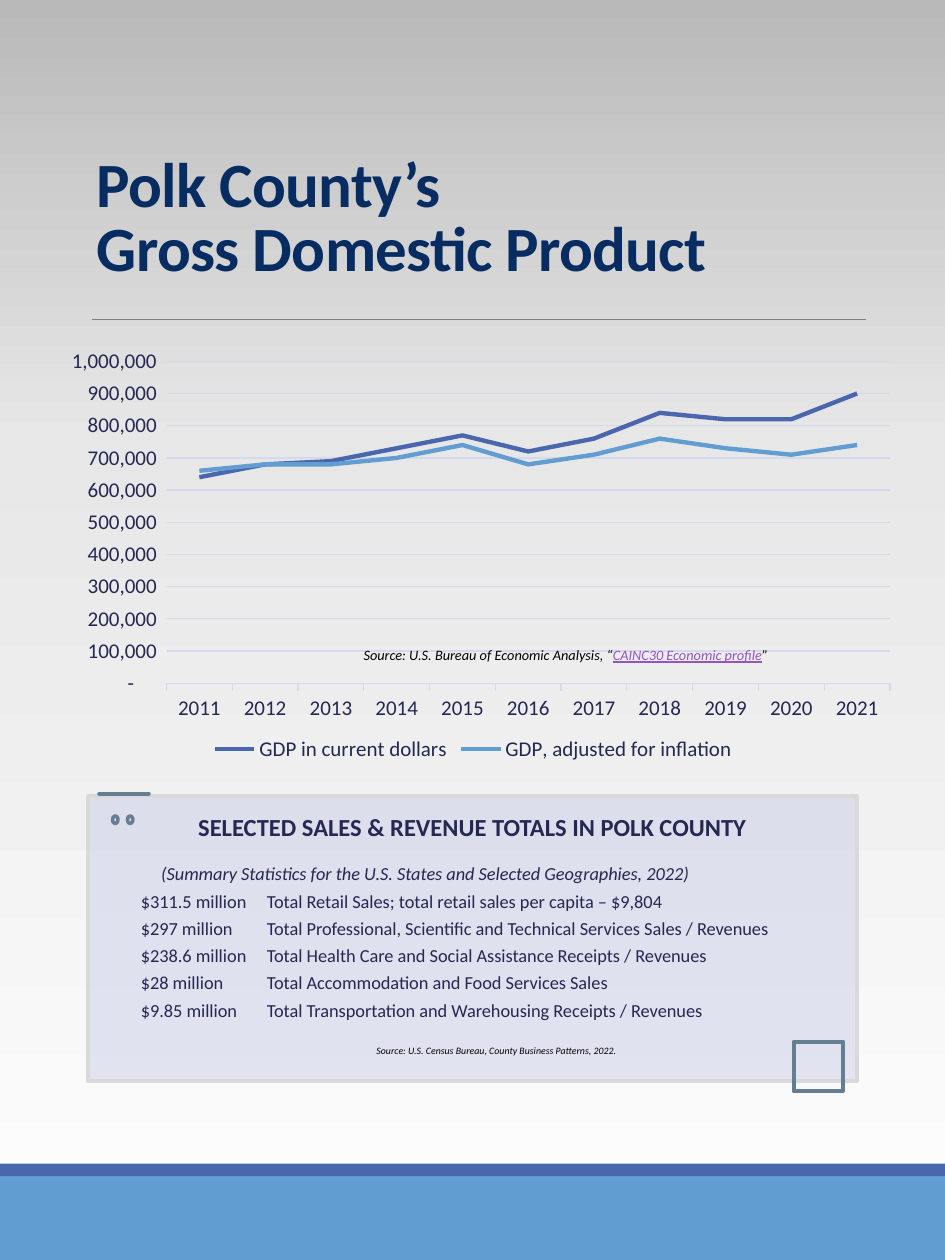
from copy import deepcopy
from dataclasses import dataclass
from math import cos, pi, sin

from lxml.etree import SubElement
from pptx import Presentation
from pptx.chart.data import CategoryChartData
from pptx.dml.color import RGBColor
from pptx.enum.chart import XL_CHART_TYPE, XL_LEGEND_POSITION, XL_TICK_MARK
from pptx.enum.shapes import MSO_CONNECTOR, MSO_SHAPE
from pptx.enum.text import MSO_ANCHOR, PP_ALIGN
from pptx.oxml.ns import qn
from pptx.util import Cm, Pt

FONT = "Calibri"
INK = "242852"
NAVY = "072C62"
BLUE = "4A66AC"
SKY = "629DD1"
GRID = "D6D8ED"
SLATE = "657E93"
BLACK = "000000"


@dataclass
class Bit:
    text: str
    size: float
    tint: str = INK
    bold: bool = False
    slant: bool = False
    under: bool = False


@dataclass
class Line:
    name: str
    tint: str
    vals: list[int]


@dataclass
class Sale:
    total: str
    label: str


@dataclass
class Stroke:
    points: list[tuple[float, float]]
    close: bool = False


LINES = [
    Line("GDP in current dollars", BLUE,
         [640000, 680000, 690000, 730000, 770000, 720000, 760000, 840000, 820000, 820000, 900000]),
    Line("GDP, adjusted for inflation", SKY,
         [660000, 680000, 680000, 700000, 740000, 680000, 710000, 760000, 730000, 710000, 740000]),
]
SALES = [
    Sale("$311.5 million", "Total Retail Sales; total retail sales per capita – $9,804"),
    Sale("$297 million", "Total Professional, Scientific and Technical Services Sales / Revenues"),
    Sale("$238.6 million", "Total Health Care and Social Assistance Receipts / Revenues"),
    Sale("$28 million", "Total Accommodation and Food Services Sales"),
    Sale("$9.85 million", "Total Transportation and Warehousing Receipts / Revenues"),
]
ARC = [(16.35 - 0.19 * cos(pi * i / 12), 21.18 - 0.19 * sin(pi * i / 12)) for i in range(13)]
ICONS = [
    Stroke([(1.92, 15.58), (2.06, 15.58), (2.21, 16.24), (2.74, 16.24), (2.86, 15.74), (2.11, 15.74)]),
    Stroke([(2.2, 16.25), (2.17, 16.33), (2.26, 16.37), (2.74, 16.37)]),
    Stroke([(16.04, 21.35), (16.66, 21.35), (16.73, 22.11), (15.99, 22.11)], True),
    Stroke([(16.16, 21.46), *ARC, (16.54, 21.46)]),
]


def hue(code: str) -> RGBColor:
    return RGBColor.from_string(code)


def style(font, size: float, tint: str) -> None:
    font.name = FONT
    font.size = Pt(size)
    font.color.rgb = hue(tint)


def write(para, *bits: Bit) -> None:
    for bit in bits:
        run = para.add_run()
        run.text = bit.text
        style(run.font, bit.size, bit.tint)
        run.font.bold = bit.bold
        run.font.italic = bit.slant
        run.font.underline = bit.under


def pen(line, tint: str, width: float) -> None:
    line.color.rgb = hue(tint)
    line.width = Pt(width)


def block(slide, kind, x: float, y: float, w: float, h: float, tint: str = ""):
    shape = slide.shapes.add_shape(kind, Cm(x), Cm(y), Cm(w), Cm(h))
    shape.shadow.inherit = False
    shape.line.fill.background()
    if tint:
        shape.fill.solid()
        shape.fill.fore_color.rgb = hue(tint)
    else:
        shape.fill.background()
    return shape


def note(slide, x: float, y: float, w: float, h: float, *bits: Bit) -> None:
    frame = slide.shapes.add_textbox(Cm(x), Cm(y), Cm(w), Cm(h)).text_frame
    frame.word_wrap = True
    frame.vertical_anchor = MSO_ANCHOR.MIDDLE
    write(frame.paragraphs[0], *bits)


def draw(slide, stroke: Stroke) -> None:
    first, *rest = stroke.points
    build = slide.shapes.build_freeform(*first, scale=Cm(1))
    build.add_line_segments(rest, close=stroke.close)
    shape = build.convert_to_shape()
    shape.shadow.inherit = False
    shape.fill.background()
    pen(shape.line, SLATE, 2.25)


def shade(slide) -> None:
    fill = slide.background.fill
    fill.gradient()
    fill.gradient_angle = 90
    stops = slide.element.find(".//" + qn("a:gsLst"))
    stops.insert(1, deepcopy(stops[0]))
    for stop, (spot, tint) in zip(fill.gradient_stops, [(0, "FEFEFE"), (0.65, "E7E7E7"), (1, "B9B9B9")]):
        stop.position = spot
        stop.color.rgb = hue(tint)


def head(slide) -> None:
    title = slide.shapes.title
    title.left, title.top, title.width, title.height = Cm(1.7), Cm(2.74), Cm(15.44), Cm(3.12)
    frame = title.text_frame
    frame.word_wrap = True
    frame.vertical_anchor = MSO_ANCHOR.BOTTOM
    para = frame.paragraphs[0]
    para.alignment = PP_ALIGN.LEFT
    para.line_spacing = 0.85
    write(para, Bit("Polk County’s", 36, NAVY, True))
    para.add_line_break()
    write(para, Bit("Gross Domestic Product", 36, NAVY, True))
    for props in title.element.iter(qn("a:rPr")):
        props.set("spc", "-40")
    rule = slide.shapes.add_connector(MSO_CONNECTOR.STRAIGHT, Cm(1.85), Cm(6.43), Cm(17.45), Cm(6.43))
    pen(rule.line, "808080", 0.5)
    SubElement(rule.element.spPr, qn("a:effectLst"))


def place(chart) -> None:
    area = chart.element.find(".//" + qn("c:plotArea"))
    for old in area.findall(qn("c:layout")):
        area.remove(old)
    lay = SubElement(area, qn("c:layout"))
    area.insert(0, lay)
    man = SubElement(lay, qn("c:manualLayout"))
    for tag, val in [("layoutTarget", "inner"), ("xMode", "edge"), ("yMode", "edge"),
                     ("x", "0.135"), ("y", "0.035"), ("w", "0.861"), ("h", "0.767")]:
        SubElement(man, qn("c:" + tag)).set("val", val)


def plot(slide) -> None:
    data = CategoryChartData()
    data.categories = [str(year) for year in range(2011, 2022)]
    for line in LINES:
        data.add_series(line.name, line.vals)
    chart = slide.shapes.add_chart(
        XL_CHART_TYPE.LINE, Cm(1.07), Cm(6.99), Cm(16.94), Cm(8.46), data).chart
    style(chart.font, 10, BLACK)
    chart.has_title = False
    chart.has_legend = True
    chart.legend.position = XL_LEGEND_POSITION.BOTTOM
    chart.legend.include_in_layout = False
    style(chart.legend.font, 12, INK)
    chart.plots[0].vary_by_categories = False
    for series, line in zip(chart.plots[0].series, LINES):
        series.smooth = False
        pen(series.format.line, line.tint, 2.5)
    years, worth = chart.category_axis, chart.value_axis
    for axis in (years, worth):
        style(axis.tick_labels.font, 12, INK)
    years.major_tick_mark = XL_TICK_MARK.OUTSIDE
    pen(years.format.line, GRID, 0.75)
    worth.major_tick_mark = XL_TICK_MARK.NONE
    worth.minimum_scale = 0
    worth.format.line.fill.background()
    worth.has_major_gridlines = True
    pen(worth.major_gridlines.format.line, GRID, 0.75)
    worth.tick_labels.number_format = '_(* #,##0_);_(* \\(#,##0\\);_(* "-"??_);_('
    worth.tick_labels.number_format_is_linked = False
    place(chart)


def panel(slide) -> None:
    box = block(slide, MSO_SHAPE.RECTANGLE, 1.78, 16.05, 15.49, 5.74, "C9CBE7")
    SubElement(box.element.spPr.find(".//" + qn("a:srgbClr")), qn("a:alpha")).set("val", "48000")
    pen(box.line, "D9D9D9", 2.25)
    frame = box.text_frame
    frame.word_wrap = True
    frame.vertical_anchor = MSO_ANCHOR.TOP
    frame.margin_top = Cm(0.32)
    para = frame.paragraphs[0]
    para.alignment = PP_ALIGN.CENTER
    para.space_after = Pt(12)
    write(para, Bit("SELECTED SALES & REVENUE TOTALS IN POLK COUNTY", 14, bold=True))
    rows = [(1.22, Bit("(Summary Statistics for the U.S. States and Selected Geographies, 2022)", 10.5, slant=True))]
    rows += [(0.81, Bit(f"{sale.total}\t{sale.label}", 10.5)) for sale in SALES]
    for dent, bit in rows:
        para = frame.add_paragraph()
        para.alignment = PP_ALIGN.LEFT
        para.space_after = Pt(3)
        write(para, bit)
        props = para._p.get_or_add_pPr()
        props.set("marL", str(Cm(dent)))
        props.set("indent", "0")
        tabs = SubElement(props, qn("a:tabLst"))
        SubElement(tabs, qn("a:tab"), pos=str(Cm(3.81)), algn="l")


def main() -> None:
    deck = Presentation()
    deck.slide_width, deck.slide_height = Cm(19.05), Cm(25.4)
    slide = deck.slides.add_slide(deck.slide_layouts[5])
    shade(slide)
    block(slide, MSO_SHAPE.RECTANGLE, 0, 23.7, 19.05, 1.7, SKY)
    block(slide, MSO_SHAPE.RECTANGLE, 0, 23.46, 19.05, 0.25, BLUE)
    head(slide)
    plot(slide)
    note(slide, 7.08, 12.78, 9.04, 0.84,
         Bit("Source: U.S. Bureau of Economic Analysis, “", 8.2, BLACK, slant=True),
         Bit("CAINC30 Economic profile", 8.2, "9454C3", slant=True, under=True),
         Bit("”", 8.2, BLACK, slant=True))
    panel(slide)
    for x in (2.27, 2.57):
        wheel = block(slide, MSO_SHAPE.OVAL, x, 16.45, 0.11, 0.15)
        pen(wheel.line, SLATE, 2)
    for stroke in ICONS:
        draw(slide, stroke)
    note(slide, 7.34, 20.93, 9.91, 0.51,
         Bit("Source: U.S. Census Bureau, County Business Patterns, 2022.", 5.6, BLACK, slant=True))
    deck.save("out.pptx")


if __name__ == "__main__":
    main()
